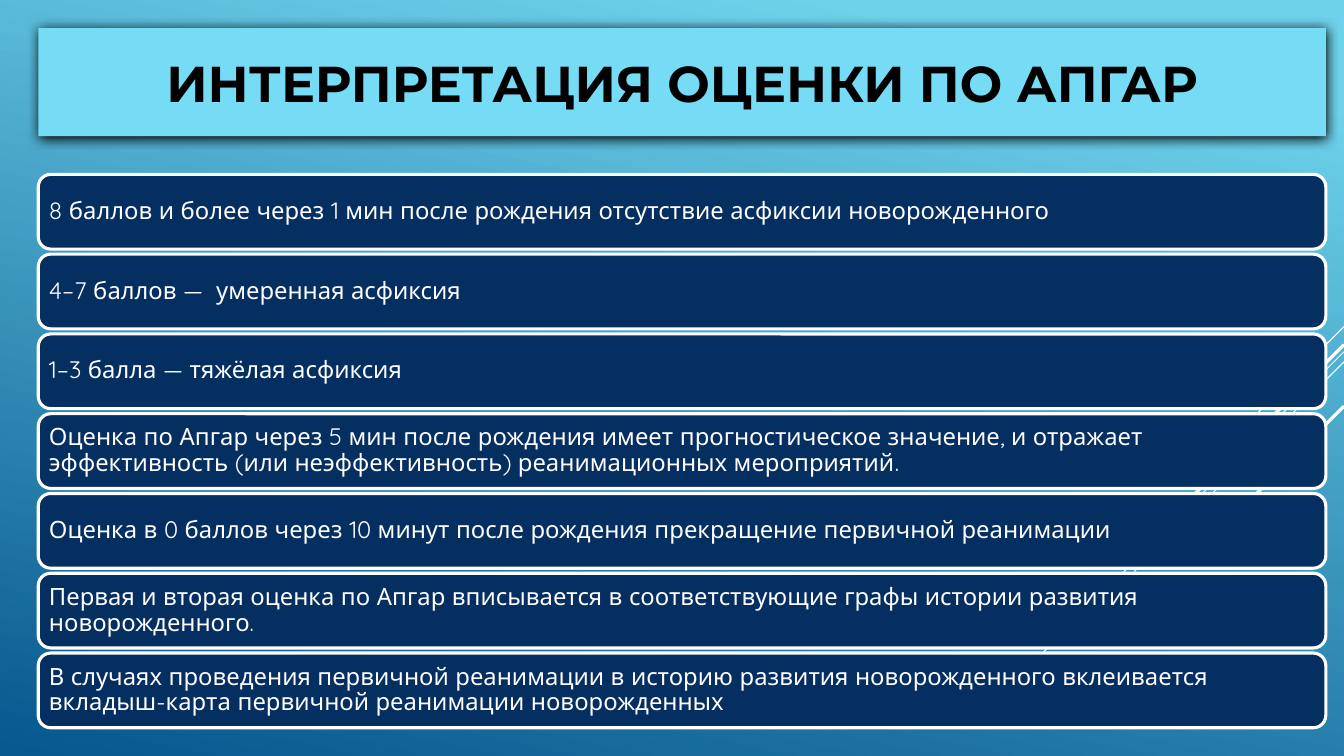
from lxml import etree
from pptx import Presentation
from pptx.dml.color import RGBColor
from pptx.enum.shapes import MSO_CONNECTOR, MSO_SHAPE
from pptx.enum.text import MSO_ANCHOR, MSO_AUTO_SIZE, PP_ALIGN
from pptx.oxml.ns import qn
from pptx.util import Inches, Pt

STRAIGHT = MSO_CONNECTOR.STRAIGHT
ROUNDED = MSO_SHAPE.ROUNDED_RECTANGLE
MIDDLE = MSO_ANCHOR.MIDDLE
NO_FIT = MSO_AUTO_SIZE.NONE
LEFT, CENTER = PP_ALIGN.LEFT, PP_ALIGN.CENTER

WIDTH, HEIGHT = 13.33, 7.5
TITLE_ONLY = 5
WHITE, BLACK, NAVY, SKY = "FFFFFF", "000000", "052F61", "76DBF4"

TITLE = "ИНТЕРПРЕТАЦИЯ ОЦЕНКИ ПО АПГАР"
STATEMENTS = [
    "8 баллов и более через 1 мин после рождения отсутствие асфиксии новорожденного",
    "4–7 баллов —  умеренная асфиксия",
    "1–3 балла — тяжёлая асфиксия",
    "Оценка по Апгар через 5 мин после рождения имеет прогностическое значение, "
    "и отражает эффективность (или неэффективность) реанимационных мероприятий.",
    "Оценка в 0 баллов через 10 минут после рождения прекращение первичной реанимации",
    "Первая и вторая оценка по Апгар вписывается в соответствующие графы истории "
    "развития новорожденного.",
    "В случаях проведения первичной реанимации в историю развития новорожденного "
    "вклеивается вкладыш-карта первичной реанимации новорожденных",
]
# Top of each ray on the right edge, its diagonal run, and its weight
RAYS = [(3.24, 1, 0.75), (3.49, 3.26, 0.75), (3.59, 2.08, 0.75),
        (3.42, 1.91, 2.25), (4.03, 1.39, 2.25)]


def color(hex_code):
    return RGBColor.from_string(hex_code)


def add_text(frame, text, font, size, hex_code, align, bold=False):
    frame.word_wrap = True
    frame.auto_size = NO_FIT
    frame.vertical_anchor = MIDDLE
    para = frame.paragraphs[0]
    para.alignment = align
    span = para.add_run()
    span.text = text
    span.font.name = font
    span.font.size = Pt(size)
    span.font.bold = bold
    span.font.color.rgb = color(hex_code)
    return para


def paint_background(page):
    fill = page.background.fill
    fill.gradient()
    fill.gradient_angle = 360 - 102
    for stop, position, hex_code in zip(
            fill.gradient_stops, (0.1, 1), ("6ED2EB", "06588E")):
        stop.position = position
        stop.color.rgb = color(hex_code)


def add_rays(page, right):
    """Draw the diagonal rays that run down and left from the right edge."""
    for top, run, weight in RAYS:
        ray = page.shapes.add_connector(
            STRAIGHT, Inches(right), Inches(top),
            Inches(right - run), Inches(top + run))
        ray.line.color.rgb = color(WHITE)
        ray.line.width = Pt(weight)
        etree.SubElement(ray._element.spPr, qn("a:effectLst"))


def add_soft_shadow(shape):
    effects = etree.SubElement(shape._element.spPr, qn("a:effectLst"))
    shadow = etree.SubElement(
        effects, qn("a:outerShdw"), blurRad=str(Pt(8.5)), dist=str(Pt(1)),
        dir=str(90 * 60000), algn="ctr", rotWithShape="0")
    etree.SubElement(shadow, qn("a:srgbClr"), val=BLACK)


def add_title(page, left, top, width, height):
    title = page.shapes.title
    title.left, title.top = Inches(left), Inches(top)
    title.width, title.height = Inches(width), Inches(height)
    title.fill.solid()
    title.fill.fore_color.rgb = color(SKY)
    add_soft_shadow(title)
    add_text(title.text_frame, TITLE, "Montserrat", 36, BLACK, CENTER, bold=True)


def add_statements(page, left, top, width, height, gap=0.05):
    """Stack one bar per statement so that they fill the given height."""
    count = len(STATEMENTS)
    bar_height = (height - gap * (count - 1)) / count
    for index, statement in enumerate(STATEMENTS):
        bar = page.shapes.add_shape(
            ROUNDED, Inches(left), Inches(top + index * (bar_height + gap)),
            Inches(width), Inches(bar_height))
        bar.shadow.inherit = False
        bar.fill.solid()
        bar.fill.fore_color.rgb = color(NAVY)
        bar.line.color.rgb = color(WHITE)
        bar.line.width = Pt(2.25)
        frame = bar.text_frame
        frame.margin_left = frame.margin_right = Inches(0.07)
        frame.margin_top = frame.margin_bottom = Inches(0.07)
        para = add_text(frame, statement, "Quicksand", 17, WHITE, LEFT)
        para.line_spacing = 0.9
        para.space_after = Pt(6)


def main():
    deck = Presentation()
    deck.slide_width, deck.slide_height = Inches(WIDTH), Inches(HEIGHT)
    page = deck.slides.add_slide(deck.slide_layouts[TITLE_ONLY])
    paint_background(page)
    add_rays(page, WIDTH)
    add_title(page, 0.38, 0.28, 12.77, 1.07)
    add_statements(page, 0.38, 1.73, 12.77, 5.49)
    deck.save("out.pptx")


if __name__ == "__main__":
    main()
